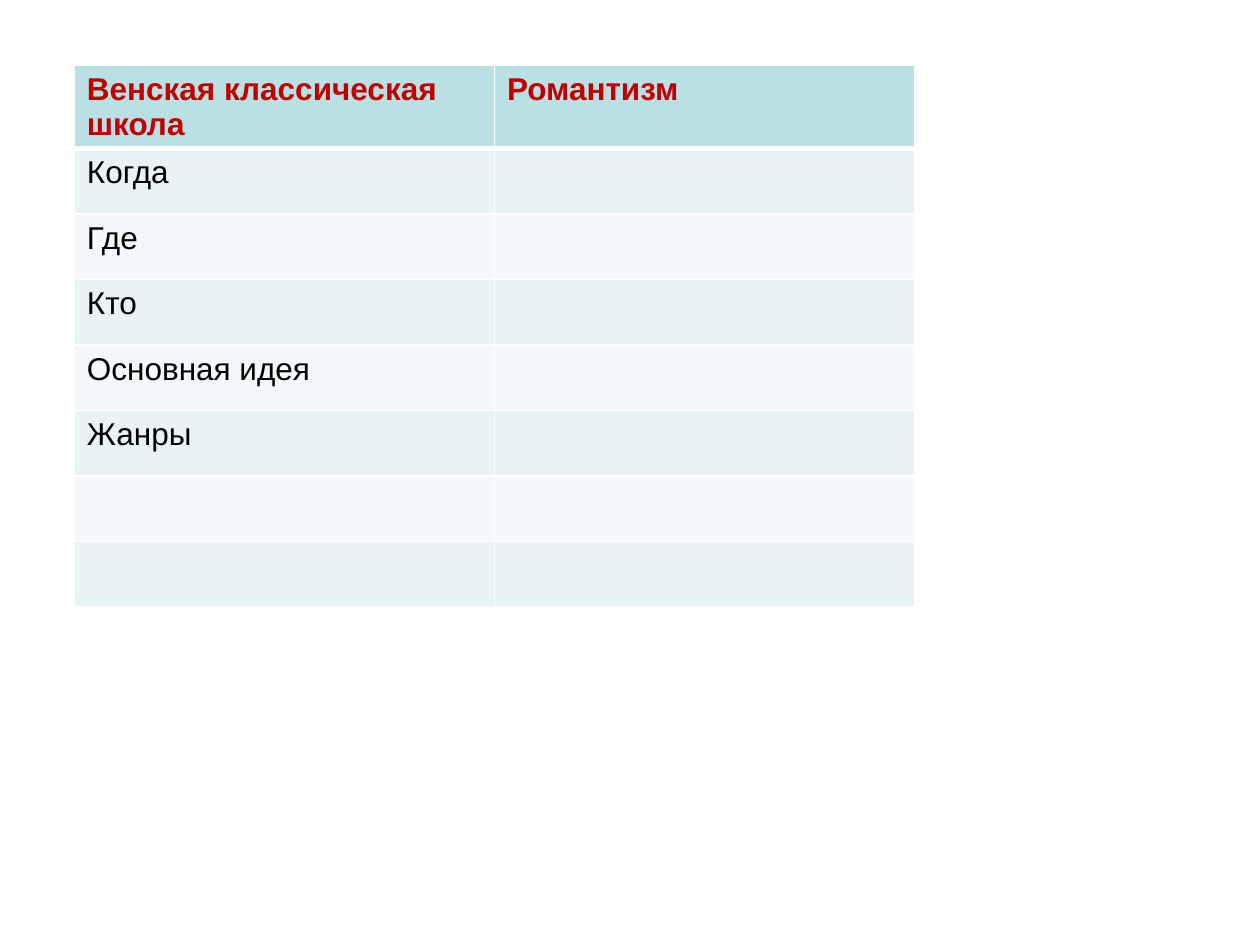
from lxml import etree
from pptx import Presentation
from pptx.dml.color import RGBColor
from pptx.oxml import ns
from pptx.util import Inches, Pt

HEADINGS = ("Венская классическая школа", "Романтизм")
TOPICS = ("Когда", "Где", "Кто", "Основная идея", "Жанры", "", "")
BANDS = ("E7F3F4", "F3F9FA")


def color(value):
    return RGBColor.from_string(value)


def add_border(cell, side, width):
    properties = cell._tc.get_or_add_tcPr()
    line = etree.SubElement(properties, ns.qn(f"a:ln{side}"), w=str(Pt(width)))
    fill = etree.SubElement(line, ns.qn("a:solidFill"))
    etree.SubElement(fill, ns.qn("a:srgbClr"), val="FFFFFF")


def format_cell(cell, words, background, ink, bold, top=1, bottom=1):
    for side, width in (("L", 1), ("R", 1), ("T", top), ("B", bottom)):
        add_border(cell, side, width)
    cell.fill.solid()
    cell.fill.fore_color.rgb = color(background)
    cell.text = words
    font = cell.text_frame.paragraphs[0].font
    font.name = "Arial"
    font.size = Pt(18)
    font.bold = bold
    font.color.rgb = color(ink)


def add_comparison(slide):
    comparison = slide.shapes.add_table(
        len(TOPICS) + 1, len(HEADINGS),
        Inches(0.59), Inches(0.52), Inches(6.67), Inches(4.09),
    ).table
    for row in comparison.rows:
        row.height = Inches(0.52)
    comparison.rows[0].height = Inches(0.44)
    for column, heading in enumerate(HEADINGS):
        format_cell(comparison.cell(0, column), heading, "BBE0E3", "C00000", True, bottom=3)
    for index, topic in enumerate(TOPICS):
        for column, words in enumerate((topic, "")):
            format_cell(
                comparison.cell(index + 1, column), words, BANDS[index % 2],
                "000000", False, top=1 if index else 3,
            )


def main():
    presentation = Presentation()
    presentation.slide_width = Inches(10)
    presentation.slide_height = Inches(7.5)
    slide = presentation.slides.add_slide(presentation.slide_layouts[6])
    add_comparison(slide)
    presentation.save("out.pptx")


if __name__ == "__main__":
    main()
